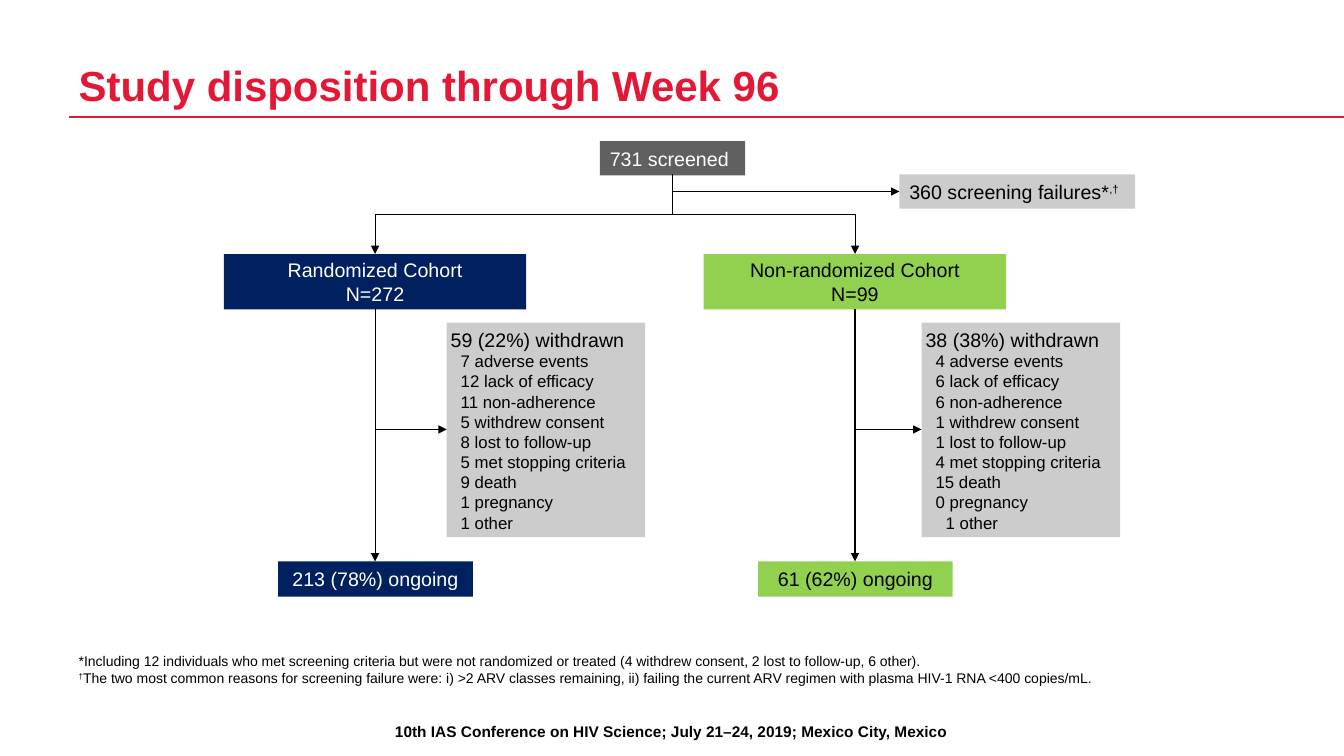
from lxml import etree
from pptx import Presentation
from pptx.dml.color import RGBColor
from pptx.enum.shapes import MSO_CONNECTOR as CONN, MSO_SHAPE
from pptx.enum.text import MSO_ANCHOR as ANCHOR, PP_ALIGN as ALIGN
from pptx.oxml.ns import qn
from pptx.util import Inches, Pt

RED, BLACK, WHITE = "E31836", "000000", "FFFFFF"
GREY, DARK_GREY, NAVY, GREEN = "CCCCCC", "606060", "002060", "92D050"


def box(x, y, w, h, paras, color=BLACK, fill=None, align=ALIGN.LEFT,
        anchor=ANCHOR.MIDDLE, inset=(0.04, 0.05), bold=False):
    """Add a text box, or a rectangle if filled.

    Each paragraph is (size, left indent, runs); runs starting with ^ are superscript.
    """
    at = [Inches(v) for v in (x, y, w, h)]
    if fill:
        s = sp.add_shape(MSO_SHAPE.RECTANGLE, *at)
        s.shadow.inherit = False
        s.fill.solid()
        s.fill.fore_color.rgb = RGBColor.from_string(fill)
        s.line.fill.background()
    else:
        s = sp.add_textbox(*at)
    tf = s.text_frame
    tf.word_wrap = True
    tf.vertical_anchor = anchor
    tf.margin_left = tf.margin_right = Inches(inset[0])
    tf.margin_top = tf.margin_bottom = Inches(inset[1])
    for i, (size, indent, runs) in enumerate(paras):
        p = tf.add_paragraph() if i else tf.paragraphs[0]
        p.alignment = align
        if indent:
            p._p.get_or_add_pPr().set("marL", str(Inches(indent)))
        for text in runs:
            r = p.add_run()
            r.text = text.removeprefix("^")
            r.font.name, r.font.size, r.font.bold = "Arial", Pt(size), bold
            r.font.color.rgb = RGBColor.from_string(color)
            if text.startswith("^"):
                r.font._element.set("baseline", "30000")
    return tf


def connect(x1, y1, x2, y2, preset="line", color=BLACK, width=0.75, arrow=True):
    """Draw a straight line, or a bent connector that leaves downwards."""
    if preset == "line":
        c = sp.add_connector(CONN.STRAIGHT, *[Inches(v) for v in (x1, y1, x2, y2)])
    else:
        # The frame is a quarter turn away from the drawn extent
        w, h = y2 - y1, abs(x2 - x1)
        left, top = (x1 + x2 - w) / 2, (y1 + y2 - h) / 2
        c = sp.add_connector(CONN.ELBOW, *[Inches(v) for v in (left, top, left + w, top + h)])
        xfrm = c._element.spPr.find(qn("a:xfrm"))
        xfrm.set("rot", str((270 if x2 > x1 else 90) * 60000))
        if x2 > x1:
            xfrm.set("flipH", "1")
        c._element.spPr.find(qn("a:prstGeom")).set("prst", preset)
    c.line.color.rgb = RGBColor.from_string(color)
    c.line.width = Pt(width)
    if arrow:
        etree.SubElement(c.line._get_or_add_ln(), qn("a:tailEnd"), type="triangle")
    etree.SubElement(c._element.spPr, qn("a:effectLst"))


prs = Presentation()
prs.slide_width, prs.slide_height = Inches(13.33), Inches(7.5)
sp = prs.slides.add_slide(prs.slide_layouts[6]).shapes

# Title, footnotes and conference line
connect(0.68, 1.16, 13.33, 1.16, color=RED, width=2, arrow=False)
title = box(0.78, 0.17, 11, 0.92, [(30, 0, ["Study disposition through Week 96"])],
            RED, anchor=ANCHOR.BOTTOM, inset=(0, 0), bold=True)
title.paragraphs[0].line_spacing = Pt(35)
box(0.78, 6.1, 12.19, 0.71, [
    (10, 0, ["*Including 12 individuals who met screening criteria but were not randomized "
             "or treated (4 withdrew consent, 2 lost to follow-up, 6 other)."]),
    (10, 0, ["^†", "The two most common reasons for screening failure were: i) >2 ARV classes "
             "remaining, ii) failing the current ARV regimen with plasma HIV-1 RNA <400 copies/mL."]),
], anchor=ANCHOR.BOTTOM, inset=(0, 0))
box(0.09, 7.11, 13.14, 0.29,
    [(11, 0, ["10th IAS Conference on HIV Science; July 21–24, 2019; Mexico City, Mexico"])],
    align=ALIGN.CENTER, inset=(0.1, 0.05), bold=True)

# Screening
SCREENED_X, SCREENED_BOTTOM = 6.67, 1.73
box(5.95, 1.4, 1.44, 0.34, [(14, 0, ["731 screened"])], WHITE, DARK_GREY, inset=(0.1, 0.05))
box(8.92, 1.73, 2.34, 0.34, [(14, 0, ["360 screening failures*", "^,†"])],
    fill=GREY, inset=(0.1, 0.05))
connect(SCREENED_X, SCREENED_BOTTOM, 8.92, 1.9, "bentConnector2")

# Cohorts: centre, fill, text colour, name, size, ongoing, withdrawn box left, total, counts
REASONS = ["adverse events", "lack of efficacy", "non-adherence", "withdrew consent",
           "lost to follow-up", "met stopping criteria", "death", "pregnancy", "other"]
COHORTS = [
    (3.72, NAVY, WHITE, "Randomized Cohort", "N=272", "213 (78%) ongoing",
     4.43, "59 (22%) withdrawn", [7, 12, 11, 5, 8, 5, 9, 1, 1], 0.1),
    (8.48, GREEN, BLACK, "Non-randomized Cohort", "N=99", "61 (62%) ongoing",
     9.14, "38 (38%) withdrawn", [4, 6, 6, 1, 1, 4, 15, 0, 1], 0.2),
]
for cx, fill, color, name, size, ongoing, left, total, counts, last_indent in COHORTS:
    connect(SCREENED_X, SCREENED_BOTTOM, cx, 2.52, "bentConnector3")
    box(cx - 1.5, 2.52, 3, 0.55, [(14, 0, [name]), (14, 0, [size])], color, fill, ALIGN.CENTER)
    box(cx - 0.96, 5.57, 1.93, 0.35, [(14, 0, [ongoing])], color, fill, ALIGN.CENTER)
    indents = [0.1] * (len(REASONS) - 1) + [last_indent]
    box(left, 3.2, 1.97, 2.13, [(14, 0, [total])] + [
        (12, indent, [f"{n} {reason}"]) for n, reason, indent in zip(counts, REASONS, indents)
    ], fill=GREY)
    connect(cx, 3.07, left, 4.26, "bentConnector2")
    connect(cx, 3.07, cx, 5.57)

prs.save("out.pptx")
